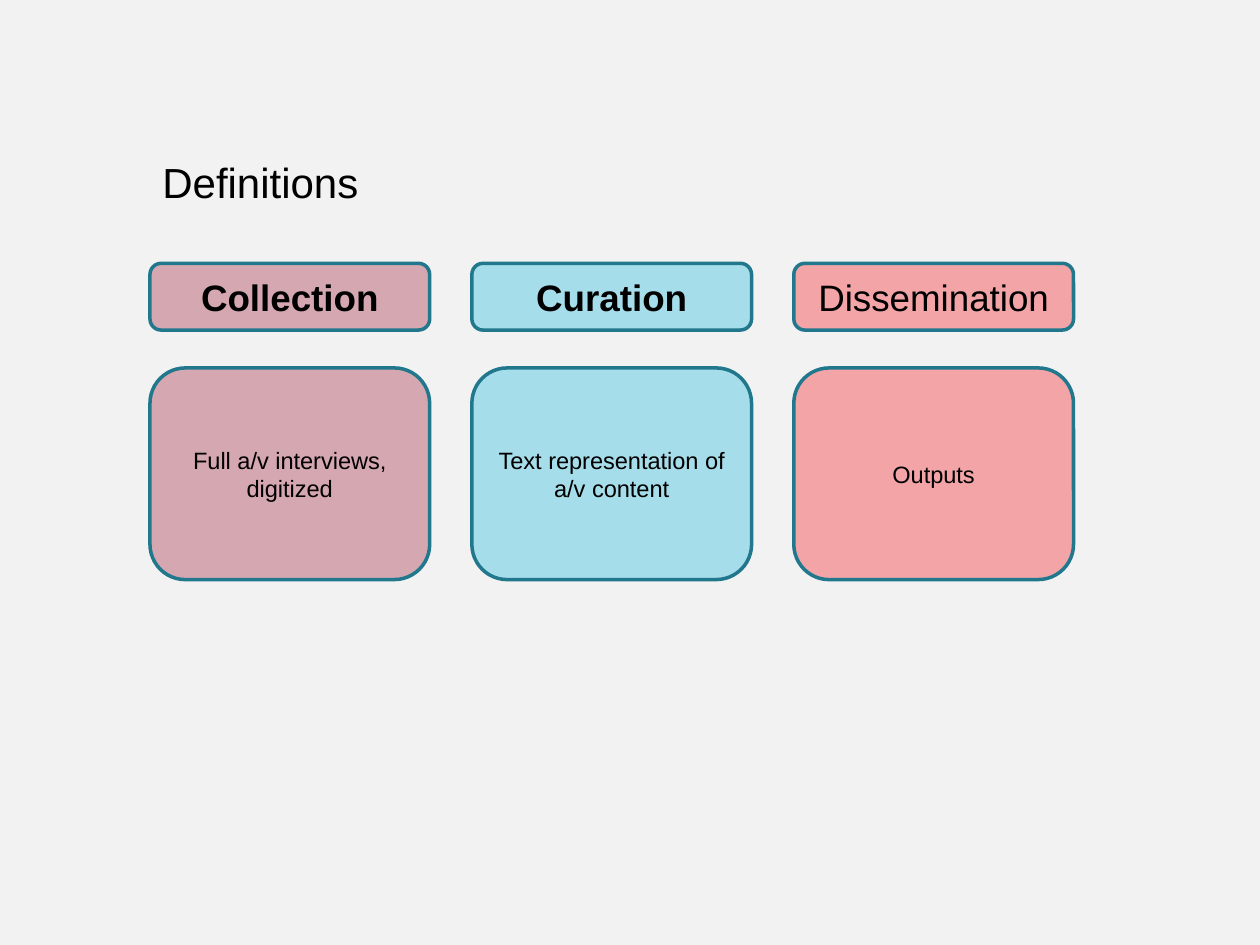
from pptx import Presentation
from pptx.dml.color import RGBColor
from pptx.enum.shapes import MSO_SHAPE
from pptx.enum.text import MSO_ANCHOR, PP_ALIGN
from pptx.util import Inches, Pt

ROUNDED = MSO_SHAPE.ROUNDED_RECTANGLE
MIDDLE = MSO_ANCHOR.MIDDLE
CENTER = PP_ALIGN.CENTER

FONT = "Arial"
COLORS = {
    "background": "F2F2F2",
    "text": "000000",
    "outline": "21788D",
    "collection": "D5A7B1",
    "curation": "A6DDEA",
    "dissemination": "F2A4A7",
}


def color(name):
    return RGBColor.from_string(COLORS[name])


def add_run(p, text, size, bold=False):
    r = p.add_run()
    r.text = text
    r.font.name = FONT
    r.font.size = Pt(size)
    r.font.bold = bold
    r.font.color.rgb = color("text")


prs = Presentation()
prs.slide_width = Inches(10)
prs.slide_height = Inches(7.5)
s = prs.slides.add_slide(prs.slide_layouts[6])
s.background.fill.solid()
s.background.fill.fore_color.rgb = color("background")

# Title
tf = s.shapes.add_textbox(Inches(1.19), Inches(1.19), Inches(7.14), Inches(0.5)).text_frame
tf.word_wrap = True
add_run(tf.paragraphs[0], "Definitions", 24)

# Three columns, each a heading box above a definition box
LEFT, WIDTH, PITCH = 1.19, 2.22, 2.555
columns = [
    ("collection", "Collection", True, "Full a/v interviews, digitized"),
    ("curation", "Curation", True, "Text representation of a/v content"),
    ("dissemination", "Dissemination", False, "Outputs"),
]
for i, (fill, heading, bold, definition) in enumerate(columns):
    boxes = [
        (2.09, 0.53, heading, 21, bold),
        (2.92, 1.68, definition, 13.5, False),
    ]
    for top, height, text, size, is_bold in boxes:
        sp = s.shapes.add_shape(ROUNDED, Inches(LEFT + i * PITCH), Inches(top),
                                Inches(WIDTH), Inches(height))
        sp.shadow.inherit = False
        sp.fill.solid()
        sp.fill.fore_color.rgb = color(fill)
        sp.line.color.rgb = color("outline")
        sp.line.width = Pt(2)
        tf = sp.text_frame
        tf.word_wrap = True
        tf.vertical_anchor = MIDDLE
        p = tf.paragraphs[0]
        p.alignment = CENTER
        add_run(p, text, size, is_bold)

prs.save("out.pptx")
